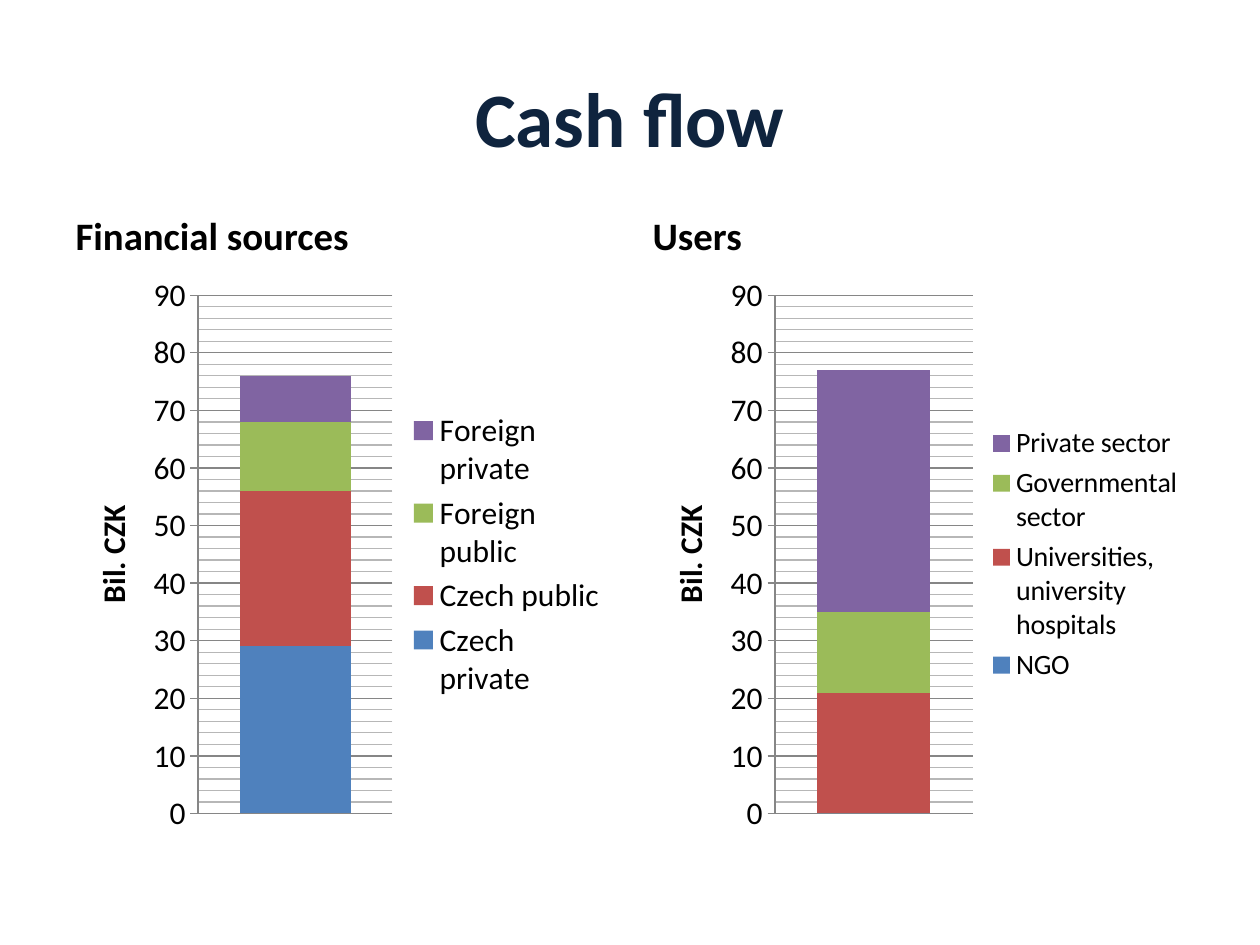
import copy

import pptx
import pptx.chart.data
import pptx.dml.color
import pptx.enum.chart
import pptx.enum.text
import pptx.oxml.ns
import pptx.util

RGBColor = pptx.dml.color.RGBColor
Inches, Pt = pptx.util.Inches, pptx.util.Pt
qn = pptx.oxml.ns.qn

NAVY = RGBColor(0x0F, 0x24, 0x3E)
BLACK = RGBColor(0x00, 0x00, 0x00)
AXIS_GREY = RGBColor(0x86, 0x86, 0x86)
MINOR_GREY = RGBColor(0xB7, 0xB7, 0xB7)
SERIES_COLOURS = [
    RGBColor(0x4F, 0x81, 0xBD),
    RGBColor(0xC0, 0x50, 0x4D),
    RGBColor(0x9B, 0xBB, 0x59),
    RGBColor(0x80, 0x64, 0xA2),
]
FONT = "Calibri"

TITLE = "Cash flow"
AXIS_TITLE = "Bil. CZK"
PANELS = [
    ("Financial sources", 18, [
        ("Czech private", 29),
        ("Czech public", 27),
        ("Foreign public", 12),
        ("Foreign private", 8),
    ]),
    ("Users", 16, [
        ("NGO", 0),
        ("Universities, university hospitals", 21),
        ("Governmental sector", 14),
        ("Private sector", 42),
    ]),
]

SLIDE_WIDTH, SLIDE_HEIGHT = 10, 7.5
MARGIN, GUTTER = 0.5, 0.16
COLUMN_WIDTH = (SLIDE_WIDTH - 2 * MARGIN - GUTTER) / 2
HEADING_TOP, HEADING_HEIGHT, CHART_HEIGHT = 1.68, 0.42, 4.6


def style_font(font, size, colour=BLACK, bold=False):
    font.name = FONT
    font.size = Pt(size)
    font.bold = bold
    font.color.rgb = colour


def fill_placeholder(box, area, text, size, colour, anchor):
    box.left, box.top, box.width, box.height = map(Inches, area)
    frame = box.text_frame
    frame.text = text
    frame.vertical_anchor = anchor
    style_font(frame.paragraphs[0].runs[0].font, size, colour, True)


def style_line(line, colour):
    line.color.rgb = colour
    line.width = Pt(0.75)


def style_minor_gridlines(chart):
    major = next(chart.element.iter(qn("c:majorGridlines")))
    minor = next(chart.element.iter(qn("c:minorGridlines")))
    properties = copy.deepcopy(major.find(qn("c:spPr")))
    next(properties.iter(qn("a:srgbClr"))).set("val", str(MINOR_GREY))
    minor.append(properties)


def add_stack(page, area, series, legend_size):
    data = pptx.chart.data.CategoryChartData()
    data.categories = ["1"]
    for name, value in series:
        data.add_series(name, [value])
    chart = page.shapes.add_chart(
        pptx.enum.chart.XL_CHART_TYPE.COLUMN_STACKED, *map(Inches, area), data
    ).chart
    style_font(chart.font, 18)
    chart.has_title = False
    chart.has_legend = True
    chart.legend.position = pptx.enum.chart.XL_LEGEND_POSITION.RIGHT
    chart.legend.include_in_layout = False
    style_font(chart.legend.font, legend_size)

    plot = chart.plots[0]
    plot.gap_width, plot.overlap, plot.vary_by_categories = 75, 100, False
    for bar, colour in zip(plot.series, SERIES_COLOURS):
        bar.format.fill.solid()
        bar.format.fill.fore_color.rgb = colour

    chart.category_axis.visible = False
    axis = chart.value_axis
    axis.minimum_scale, axis.maximum_scale = 0, 90
    axis.major_unit, axis.minor_unit = 10, 2
    axis.major_tick_mark = pptx.enum.chart.XL_TICK_MARK.OUTSIDE
    axis.minor_tick_mark = pptx.enum.chart.XL_TICK_MARK.NONE
    axis.has_major_gridlines = axis.has_minor_gridlines = True
    style_line(axis.format.line, AXIS_GREY)
    style_line(axis.major_gridlines.format.line, AXIS_GREY)
    style_minor_gridlines(chart)
    frame = axis.axis_title.text_frame
    frame.text = AXIS_TITLE
    style_font(frame.paragraphs[0].runs[0].font, 18, bold=True)


def main():
    deck = pptx.Presentation()
    deck.slide_width, deck.slide_height = Inches(SLIDE_WIDTH), Inches(SLIDE_HEIGHT)
    page = deck.slides.add_slide(deck.slide_layouts.get_by_name("Comparison"))
    title, left_heading, left_body, right_heading, right_body = page.placeholders
    anchors = pptx.enum.text.MSO_ANCHOR
    fill_placeholder(title, (MARGIN, 0.3, SLIDE_WIDTH - 2 * MARGIN, 1.25),
                     TITLE, 44, NAVY, anchors.MIDDLE)
    for body in (left_body, right_body):
        body.element.getparent().remove(body.element)

    headings = (left_heading, right_heading)
    for column, (heading, (text, legend_size, series)) in enumerate(zip(headings, PANELS)):
        left = MARGIN + column * (COLUMN_WIDTH + GUTTER)
        fill_placeholder(heading, (left, HEADING_TOP, COLUMN_WIDTH, HEADING_HEIGHT),
                         text, 22.2, BLACK, anchors.BOTTOM)
        chart_area = (left, HEADING_TOP + HEADING_HEIGHT, COLUMN_WIDTH, CHART_HEIGHT)
        add_stack(page, chart_area, series, legend_size)

    deck.save("out.pptx")


if __name__ == "__main__":
    main()
